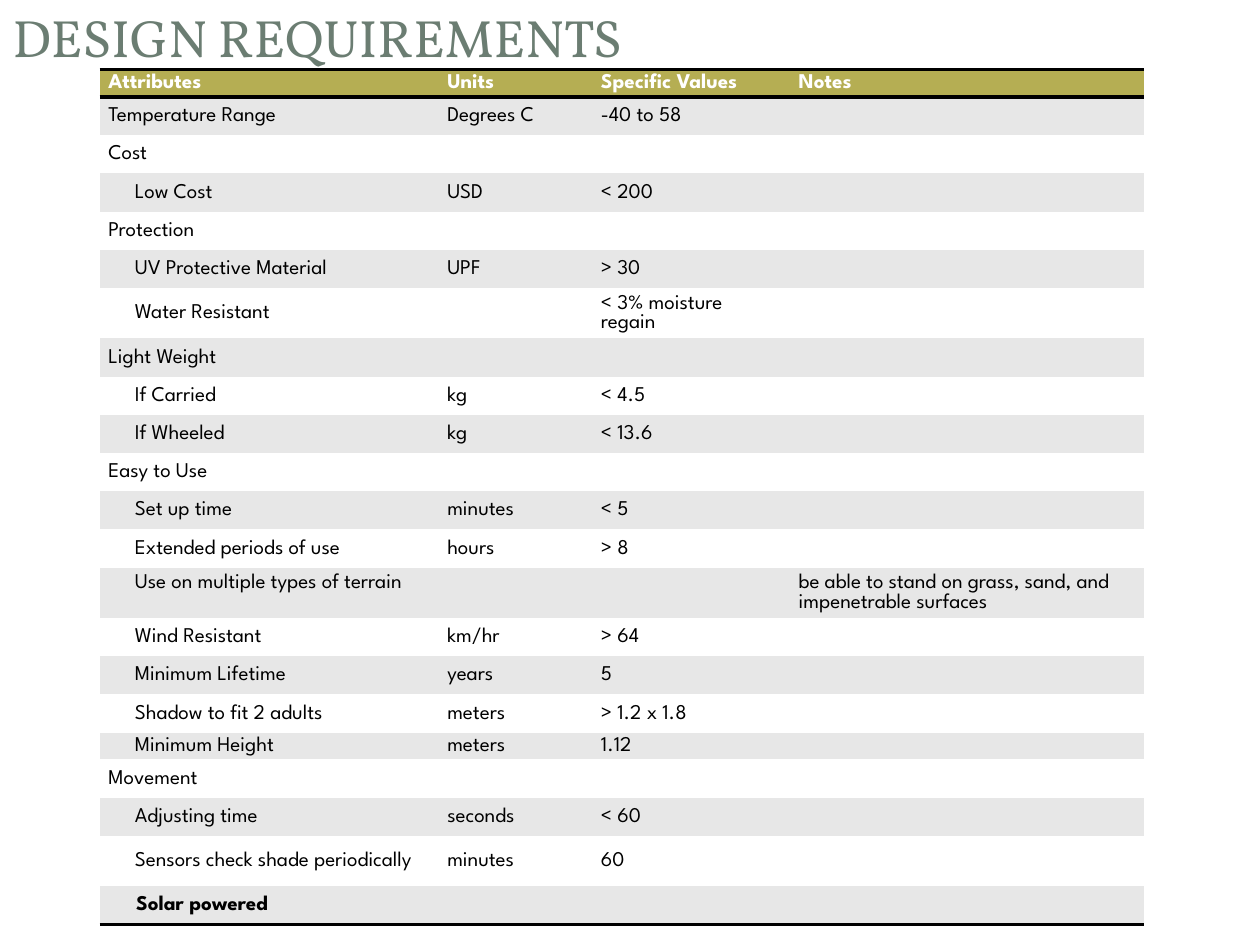
from lxml import etree
from pptx import Presentation
from pptx.dml.color import RGBColor
from pptx.enum.text import MSO_ANCHOR as Anchor, MSO_AUTO_SIZE as AutoSize, PP_ALIGN as Align
from pptx.oxml.ns import qn
from pptx.util import Inches, Pt

COLORS = {"title": "6B7D72", "header": "B5AE53", "band": "E7E7E7",
          "white": "FFFFFF", "black": "000000"}
NO_GRID_STYLE = "{2D5ABB26-0587-4C30-8999-92F81FD0307C}"
TERRAIN = "Use on multiple types of terrain"
SOLAR = "Solar powered"

# Each group heading is followed by its indented attributes.
GROUPS = [
    (("Temperature Range", "Degrees C", "-40 to 58", ""), []),
    (("Cost", "", "", ""), [("Low Cost", "USD", "< 200", "")]),
    (("Protection", "", "", ""), [
        ("UV Protective Material", "UPF", "> 30", ""),
        ("Water Resistant", "", "< 3% moisture regain", "")]),
    (("Light Weight", "", "", ""), [
        ("If Carried", "kg", "< 4.5", ""),
        ("If Wheeled", "kg", "< 13.6", "")]),
    (("Easy to Use", "", "", ""), [
        ("Set up time", "minutes", "< 5", ""),
        ("Extended periods of use", "hours", "> 8", ""),
        (TERRAIN, "", "", "be able to stand on grass, sand, and impenetrable surfaces"),
        ("Wind Resistant", "km/hr", "> 64", ""),
        ("Minimum Lifetime", "years", "5", ""),
        ("Shadow to fit 2 adults", "meters", "> 1.2 x 1.8", ""),
        ("Minimum Height", "meters", "1.12", "")]),
    (("Movement", "", "", ""), [
        ("Adjusting time", "seconds", "< 60", ""),
        ("Sensors check shade periodically", "minutes", "60", ""),
        (SOLAR, "", "", "")]),
]
COLUMN_WIDTHS = [2.69, 1.22, 1.57, 2.81]
TABLE_HEIGHT = 6.79
SPECIAL_HEIGHTS = {"Attributes": 0.22, "Water Resistant": 0.4, TERRAIN: 0.4,
                   "Minimum Height": 0.21, "Sensors check shade periodically": 0.4}


def write(frame, text, *, font, size, color, bold=False):
    para = frame.paragraphs[0]
    para.alignment = Align.LEFT
    if not text:
        # An empty cell still needs its text size, or its row grows.
        para._p.get_or_add_endParaRPr().set("sz", str(size * 100))
        return
    span = para.add_run()
    span.text = text
    span.font.name = font
    span.font.size = Pt(size)
    span.font.bold = bold
    span.font.color.rgb = RGBColor.from_string(COLORS[color])


def add_rule(cell, side, position):
    """Draw a black line on one side of a cell; lines must precede its fill."""
    line = etree.Element(qn(f"a:ln{side}"), w=str(Pt(2)))
    fill = etree.SubElement(line, qn("a:solidFill"))
    etree.SubElement(fill, qn("a:srgbClr"), val=COLORS["black"])
    cell._tc.get_or_add_tcPr().insert(position, line)


deck = Presentation()
deck.slide_width, deck.slide_height = Inches(10), Inches(7.5)
page = deck.slides.add_slide(deck.slide_layouts[5])

# Requirements table
rows = [("Attributes", "Units", "Specific Values", "Notes")]
indented = set()
for heading, attributes in GROUPS:
    rows += [heading, *attributes]
    indented.update(attribute[0] for attribute in attributes)

regular_height = (TABLE_HEIGHT - sum(SPECIAL_HEIGHTS.values())) / (len(rows) - len(SPECIAL_HEIGHTS))
table = page.shapes.add_table(
    len(rows), len(COLUMN_WIDTHS), Inches(0.79), Inches(0.55),
    Inches(sum(COLUMN_WIDTHS)), Inches(TABLE_HEIGHT)).table
table.horz_banding = False
table._tbl.tblPr.find(qn("a:tableStyleId")).text = NO_GRID_STYLE

for column, width in zip(table.columns, COLUMN_WIDTHS):
    column.width = Inches(width)

for row_index, values in enumerate(rows):
    name = values[0]
    is_header = row_index == 0
    is_last = row_index == len(rows) - 1
    background = "header" if is_header else "band" if row_index % 2 else "white"
    table.rows[row_index].height = Inches(SPECIAL_HEIGHTS.get(name, regular_height))
    for column_index, text in enumerate(values):
        cell = table.cell(row_index, column_index)
        cell.margin_left = cell.margin_right = Inches(0.07)
        cell.margin_top, cell.margin_bottom = Inches(0.01), 0
        cell.vertical_anchor = Anchor.MIDDLE
        if column_index == 0 and name in indented:
            cell.margin_left = Inches(0.29 if name == SOLAR else 0.28)
        if text == TERRAIN:
            cell.vertical_anchor = Anchor.TOP
            cell.margin_top = Inches(0.05)
        cell.fill.solid()
        cell.fill.fore_color.rgb = RGBColor.from_string(COLORS[background])
        write(cell.text_frame, text, font="League Spartan", size=12,
              color="white" if is_header else "black", bold=is_header or name == SOLAR)
        if is_header:
            add_rule(cell, "T", 0)
            add_rule(cell, "B", 1)
        elif is_last:
            add_rule(cell, "B", 0)

# Title, in front of the table
title = page.shapes.title
title.left, title.top = Inches(0), Inches(-0.01)
title.width, title.height = Inches(7.6), Inches(0.61)
title.text_frame.word_wrap = True
title.text_frame.auto_size = AutoSize.SHAPE_TO_FIT_TEXT
title.text_frame.vertical_anchor = Anchor.TOP
write(title.text_frame, "DESIGN REQUIREMENTS", font="Vollkorn", size=30, color="title")
page.shapes._spTree.append(title._element)

deck.save("out.pptx")
